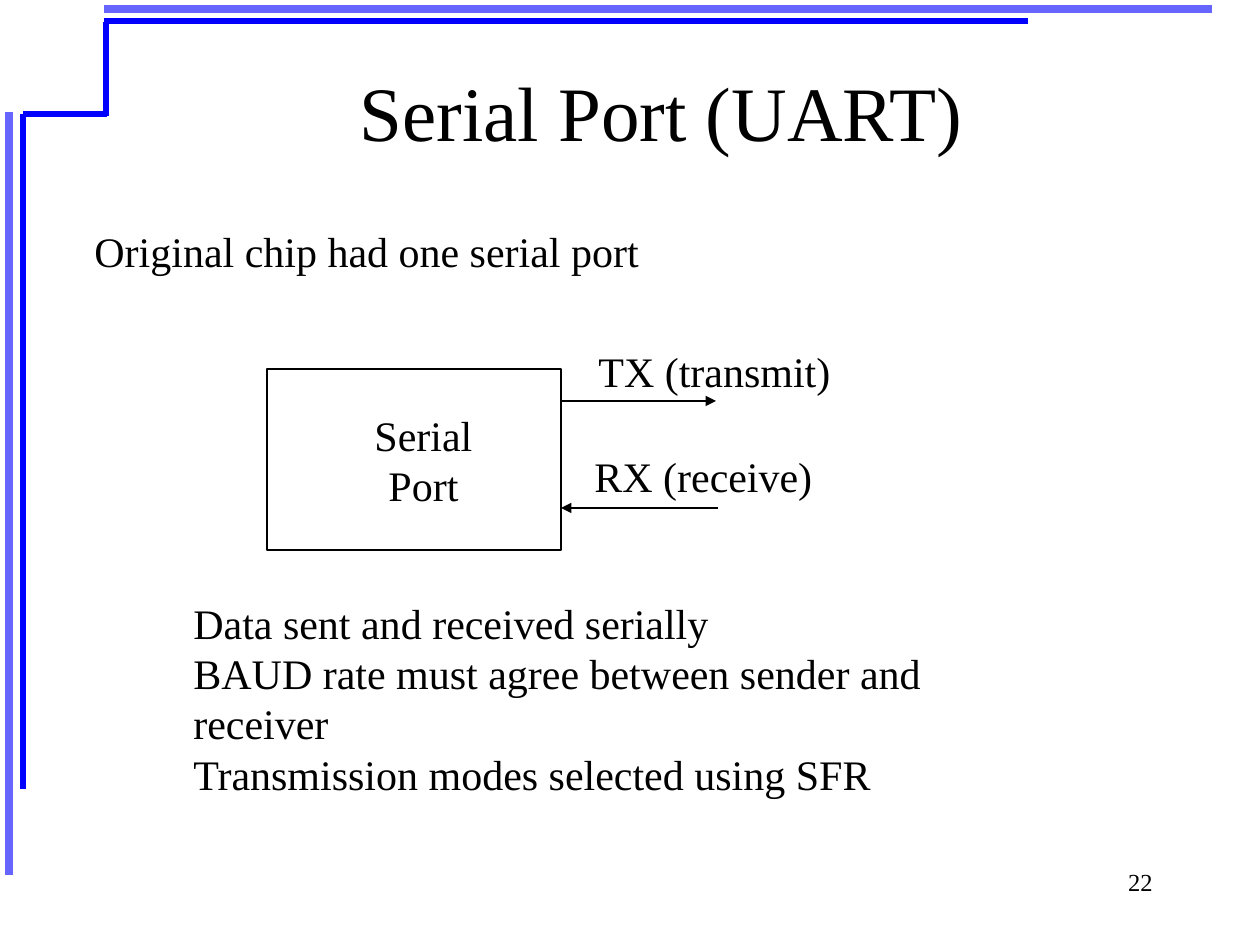
from lxml.etree import SubElement
from pptx import Presentation
from pptx.dml.color import RGBColor
from pptx.enum.shapes import MSO_CONNECTOR, MSO_SHAPE
from pptx.enum.text import MSO_ANCHOR, PP_ALIGN
from pptx.oxml.ns import qn
from pptx.util import Pt

EMU_PER_PX = 914400 / 126
COLORS = {"black": "000000", "blue": "0000FF", "light_blue": "6666FF"}


def px(n):
    return round(n * EMU_PER_PX)


class SlideBuilder:
    """Holds the slide and the style shared by its elements."""
    font = "Times New Roman"

    def __init__(self, slide):
        self.s = slide

    def line(self, x1, y1, x2, y2, color="black", width=0.75, arrow=False):
        c = self.s.shapes.add_connector(
            MSO_CONNECTOR.STRAIGHT, px(x1), px(y1), px(x2), px(y2))
        c.line.color.rgb = RGBColor.from_string(COLORS[color])
        c.line.width = Pt(width)
        if arrow:
            SubElement(c.line._get_or_add_ln(), qn("a:tailEnd"), type="triangle")
        SubElement(c._element.spPr, qn("a:effectLst"))

    def box(self, x, y, w, h):
        sp = self.s.shapes.add_shape(
            MSO_SHAPE.RECTANGLE, px(x), px(y), px(w), px(h))
        sp.shadow.inherit = False
        sp.fill.background()
        sp.line.color.rgb = RGBColor.from_string(COLORS["black"])
        sp.line.width = Pt(0.75)

    def text(self, x, y, w, h, text, size=24, align=PP_ALIGN.LEFT,
             anchor=MSO_ANCHOR.TOP, wrap=False):
        tf = self.s.shapes.add_textbox(px(x), px(y), px(w), px(h)).text_frame
        tf.word_wrap = wrap
        tf.vertical_anchor = anchor
        tf.text = text
        for p in tf.paragraphs:
            p.alignment = align
            for r in p.runs:
                r.font.name = self.font
                r.font.size = Pt(size)
                r.font.color.rgb = RGBColor.from_string(COLORS["black"])


def main():
    prs = Presentation()
    prs.slide_width, prs.slide_height = px(1260), px(945)
    b = SlideBuilder(prs.slides.add_slide(prs.slide_layouts[6]))

    # Corner frame
    for ends in ((9, 112, 9, 875), (104, 9, 1212, 9)):
        b.line(*ends, "light_blue", 4.5)
    for ends in ((23, 114, 23, 789), (104, 21, 1028, 21),
                 (23, 114, 107, 114), (106, 116, 106, 22)):
        b.line(*ends, "blue", 3)

    b.text(126, 32, 1071, 157, "Serial Port (UART)", 44,
           PP_ALIGN.CENTER, MSO_ANCHOR.MIDDLE, wrap=True)
    b.text(82, 219, 581, 63, "Original chip had one serial port")

    # Port diagram
    b.box(267, 369, 294, 181)
    b.text(362, 403, 123, 113, "Serial\nPort", align=PP_ALIGN.CENTER)
    b.line(561, 401, 716, 401, arrow=True)
    b.line(718, 508, 561, 508, arrow=True)
    b.text(586, 339, 257, 63, "TX (transmit)")
    b.text(582, 444, 243, 63, "RX (receive)")

    b.text(181, 591, 870, 214,
           "Data sent and received serially\n"
           "BAUD rate must agree between sender and receiver\n"
           "Transmission modes selected using SFR", wrap=True)
    b.text(903, 861, 262, 63, "22", 14, PP_ALIGN.RIGHT, wrap=True)

    prs.save("out.pptx")


if __name__ == "__main__":
    main()
